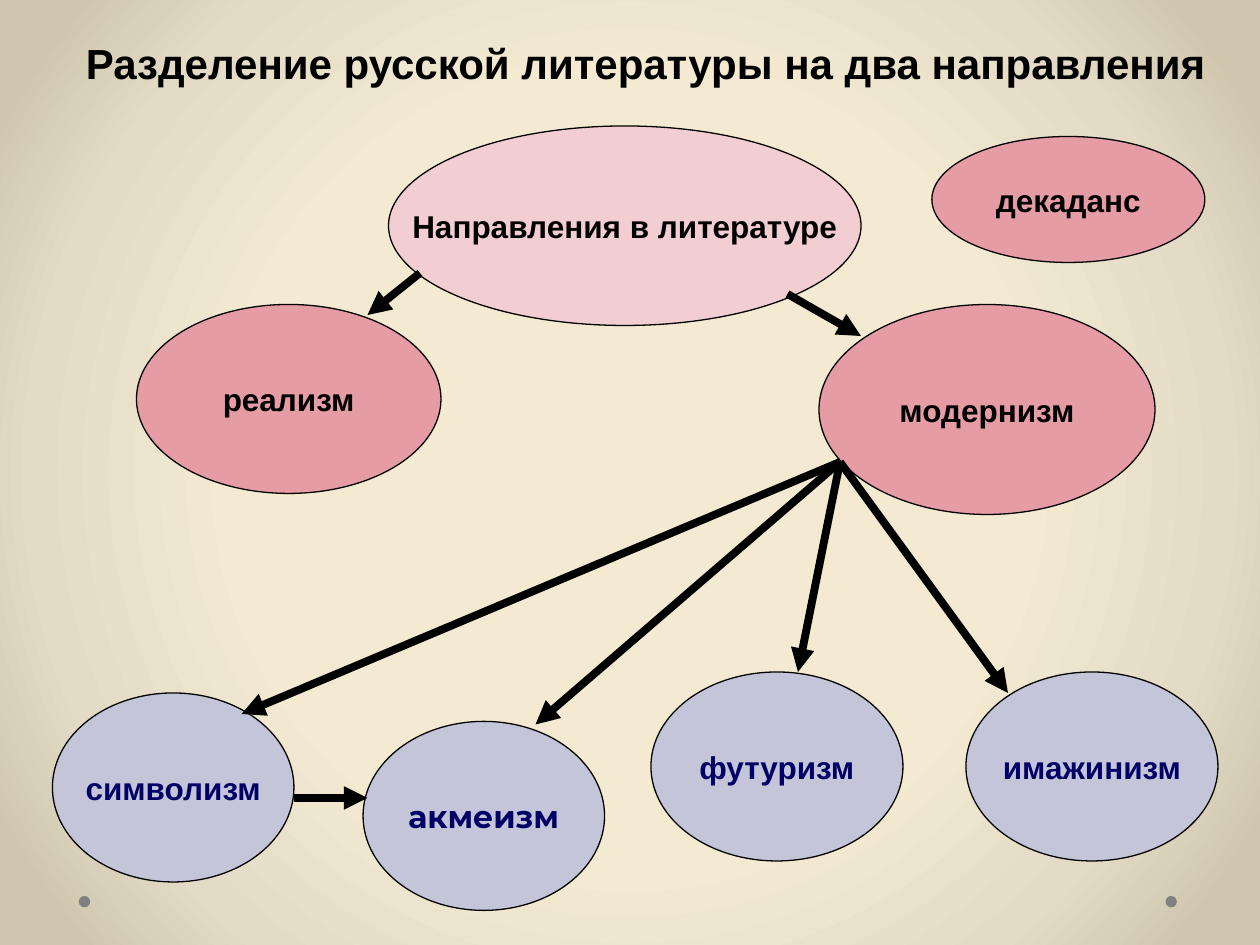
from dataclasses import dataclass

import lxml.etree
import pptx
import pptx.dml.color
import pptx.enum.shapes
import pptx.enum.text
import pptx.oxml.ns
import pptx.util

Pt = pptx.util.Pt
qn = pptx.oxml.ns.qn


@dataclass(frozen=True)
class Theme:
    ink: str = "000000"
    navy: str = "000066"
    pale_pink: str = "F2CED2"
    pink: str = "E69CA4"
    lavender: str = "C5C5D9"
    grey: str = "808080"
    background: tuple = ((50, "F3EAD1"), (76, "E3DBC5"), (92, "CFC6AD"))
    font: str = "Arial"
    accent_font: str = "Montserrat"
    title_size: float = 24
    label_size: float = 18
    outline: float = 0.75
    arrow: float = 4.5


THEME = Theme()


@dataclass(frozen=True)
class Oval:
    text: str
    left: float
    top: float
    width: float
    height: float
    fill: str
    color: str = THEME.ink
    font: str = THEME.font


@dataclass(frozen=True)
class Arrow:
    start: tuple
    end: tuple


def rgb(value: str) -> pptx.dml.color.RGBColor:
    return pptx.dml.color.RGBColor.from_string(value)


def paint_background(slide) -> None:
    """Radial gradient spreading from the centre of the slide."""
    slide.background.fill.gradient()
    gradient = next(slide.element.iter(qn("a:gradFill")))
    for child in list(gradient):
        gradient.remove(child)
    stops = lxml.etree.SubElement(gradient, qn("a:gsLst"))
    for position, color in THEME.background:
        stop = lxml.etree.SubElement(stops, qn("a:gs"), pos=str(position * 1000))
        lxml.etree.SubElement(stop, qn("a:srgbClr"), val=color)
    circle = lxml.etree.SubElement(gradient, qn("a:path"), path="circle")
    sides = dict.fromkeys("ltrb", "50000")
    lxml.etree.SubElement(circle, qn("a:fillToRect"), sides)


def write_text(shape, text: str, size: float, color: str, font: str) -> None:
    text_frame = shape.text_frame
    text_frame.text = text
    text_frame.word_wrap = False
    run_font = text_frame.paragraphs[0].runs[0].font
    run_font.name = font
    run_font.size = Pt(size)
    run_font.bold = True
    run_font.color.rgb = rgb(color)


def add_ellipse(slide, left: float, top: float, width: float, height: float, fill: str):
    shape = slide.shapes.add_shape(
        pptx.enum.shapes.MSO_SHAPE.OVAL, Pt(left), Pt(top), Pt(width), Pt(height))
    shape.shadow.inherit = False
    shape.fill.solid()
    shape.fill.fore_color.rgb = rgb(fill)
    return shape


def add_dot(slide, left: float) -> None:
    shape = add_ellipse(slide, left, 512, 6.5, 6.5, THEME.grey)
    shape.line.fill.background()


def add_oval(slide, oval: Oval) -> None:
    shape = add_ellipse(slide, oval.left, oval.top, oval.width, oval.height, oval.fill)
    shape.line.color.rgb = rgb(THEME.ink)
    shape.line.width = Pt(THEME.outline)
    write_text(shape, oval.text, THEME.label_size, oval.color, oval.font)
    shape.text_frame.vertical_anchor = pptx.enum.text.MSO_ANCHOR.MIDDLE
    shape.text_frame.paragraphs[0].alignment = pptx.enum.text.PP_ALIGN.CENTER


def add_arrow(slide, arrow: Arrow) -> None:
    connector = slide.shapes.add_connector(
        pptx.enum.shapes.MSO_CONNECTOR.STRAIGHT,
        *(Pt(value) for value in arrow.start + arrow.end))
    connector.line.color.rgb = rgb(THEME.ink)
    connector.line.width = Pt(THEME.arrow)
    line = connector.line._get_or_add_ln()
    lxml.etree.SubElement(line, qn("a:tailEnd"), type="triangle")
    properties = connector.element.spPr
    lxml.etree.SubElement(properties, qn("a:effectLst"))


def movement(text: str, left: float, top: float, width: float, font: str = THEME.font) -> Oval:
    return Oval(text, left, top, width, 108, THEME.lavender, THEME.navy, font)


OVALS = (
    Oval("Направления в литературе", 222, 72, 270, 114, THEME.pale_pink),
    Oval("реализм", 78, 174, 174, 108, THEME.pink),
    Oval("модернизм", 468, 174, 192, 120, THEME.pink),
    Oval("декаданс", 532.5, 78, 156, 72, THEME.pink),
    movement("символизм", 30, 396, 138),
    movement("акмеизм", 207.5, 412.25, 138, THEME.accent_font),
    movement("футуризм", 372, 384, 144),
    movement("имажинизм", 552, 384, 144),
)

MODERNISM_EXIT = (480, 264)
MOVEMENT_ENTRIES = ((138, 408), (306, 414), (456, 384), (576, 396))
ARROWS = (
    Arrow((240, 156), (210, 180)),
    Arrow((450, 168), (492, 192)),
    *(Arrow(MODERNISM_EXIT, entry) for entry in MOVEMENT_ENTRIES),
    Arrow((168, 456), (210, 456)),
)


def main() -> None:
    presentation = pptx.Presentation()
    presentation.slide_width = Pt(720)
    presentation.slide_height = Pt(540)
    slide = presentation.slides.add_slide(presentation.slide_layouts[6])

    # Background and corner dots
    paint_background(slide)
    for left in (666, 45):
        add_dot(slide, left)

    # Title
    title = slide.shapes.add_textbox(Pt(42), Pt(18), Pt(660), Pt(66))
    write_text(title, "Разделение русской литературы на два направления",
               THEME.title_size, THEME.ink, THEME.font)

    # Diagram
    for oval in OVALS:
        add_oval(slide, oval)
    for arrow in ARROWS:
        add_arrow(slide, arrow)

    presentation.save("out.pptx")


if __name__ == "__main__":
    main()
